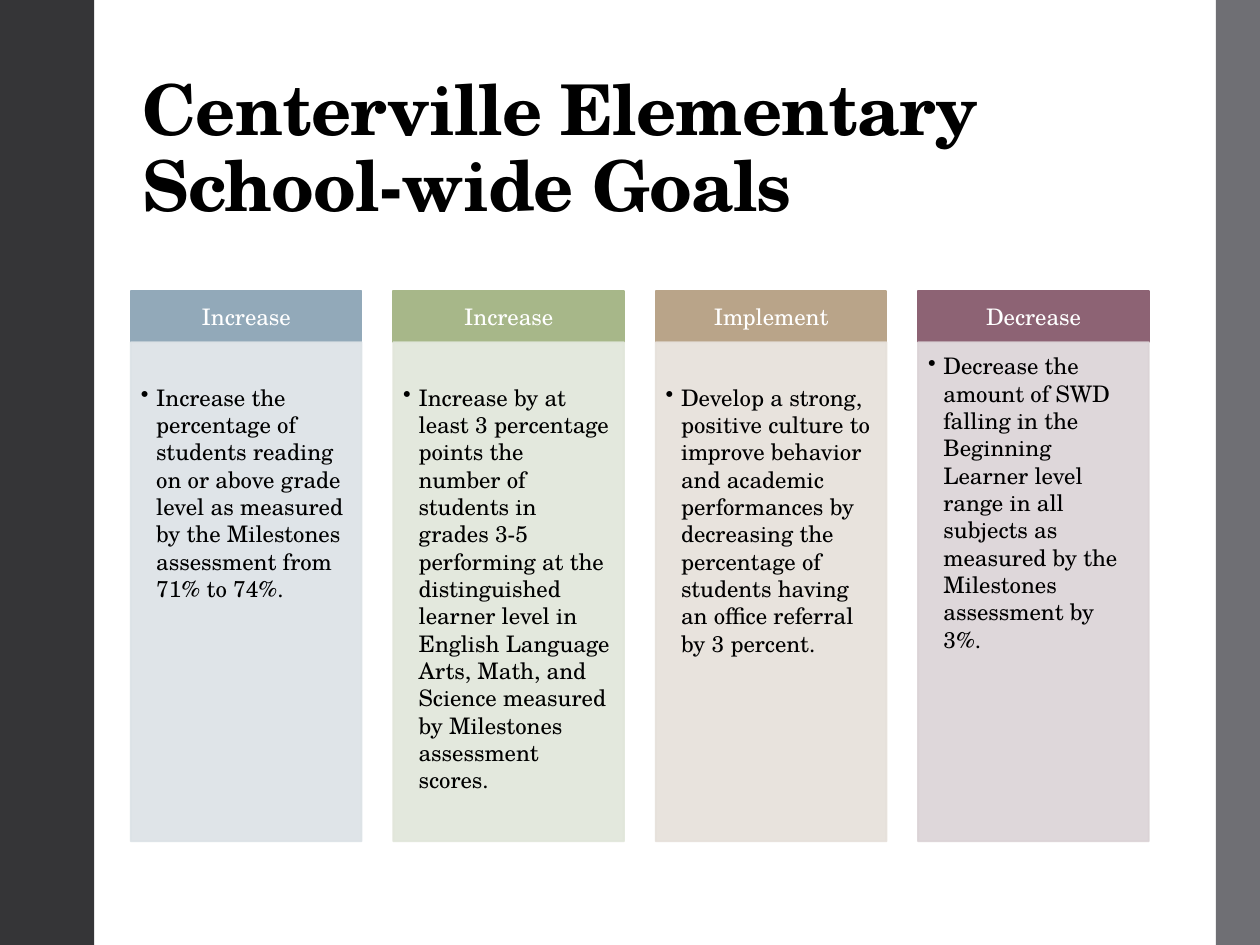
"""Build the school-wide goals slide."""
from lxml import etree
from pptx import Presentation
from pptx.dml.color import RGBColor
from pptx.enum import shapes, text
from pptx.oxml import ns
from pptx.util import Cm, Pt

FONT = "TeX Gyre Schola"
BLACK = RGBColor(0, 0, 0)
WHITE = RGBColor(255, 255, 255)
DARK = RGBColor(0x35, 0x35, 0x37)
GRAY = RGBColor(0x6F, 0x6F, 0x74)
BLUE = RGBColor(0x92, 0xA9, 0xB9)
ICE = RGBColor(0xDC, 0xE2, 0xE6)
GREEN = RGBColor(0xA7, 0xB7, 0x89)
MINT = RGBColor(0xE1, 0xE6, 0xDA)
TAN = RGBColor(0xB9, 0xA4, 0x89)
SAND = RGBColor(0xE6, 0xE0, 0xDA)
PLUM = RGBColor(0x8D, 0x63, 0x74)
ROSE = RGBColor(0xDB, 0xD3, 0xD6)

LEFT, STEP, WIDE = 2.64, 5.29, 4.65
TOP, HEAD, BODY = 5.87, 1.03, 10.06
FIRST, LOWER = 0.2, 0.83

GOALS = [
    ("Increase", BLUE, ICE, LOWER,
     "Increase the percentage of students reading on or above grade level "
     "as measured by the Milestones assessment from 71% to 74%."),
    ("Increase", GREEN, MINT, LOWER,
     "Increase by at least 3 percentage points the number of students in "
     "grades 3-5 performing at the distinguished learner level in English "
     "Language Arts, Math, and Science measured by Milestones assessment "
     "scores."),
    ("Implement", TAN, SAND, LOWER,
     "Develop a strong, positive culture to improve behavior and academic "
     "performances by decreasing the percentage of students having an "
     "office referral by 3 percent."),
    ("Decrease", PLUM, ROSE, FIRST,
     "Decrease the amount of SWD falling in the Beginning Learner level "
     "range in all subjects as measured by the Milestones assessment by 3%."),
]


def write(shape, words, size=13, color=BLACK, bold=False, anchor="TOP",
          align="LEFT", inset=(0.25, 0.13, 0.25, 0.13), line=1.0, track=0,
          bullet=False):
    """Put formatted words into a shape."""
    frame = shape.text_frame
    frame.text = words
    frame.word_wrap = True
    frame.auto_size = text.MSO_AUTO_SIZE.NONE
    frame.vertical_anchor = getattr(text.MSO_ANCHOR, anchor)
    for side, gap in zip(("left", "top", "right", "bottom"), inset):
        setattr(frame, "margin_" + side, Cm(gap))
    para = frame.paragraphs[0]
    para.alignment = getattr(text.PP_ALIGN, align)
    para.line_spacing = line
    for run in para.runs:
        font = run.font
        font.name, font.size, font.bold = FONT, Pt(size), bold
        font.color.rgb = color
        if track:
            run._r.get_or_add_rPr().set("spc", str(track))
    if bullet:
        props = para._p.get_or_add_pPr()
        props.set("marL", str(Cm(0.31)))
        props.set("indent", str(-Cm(0.31)))
        etree.SubElement(props, ns.qn("a:buChar")).set("char", "•")


class Deck:
    """Hold the style and the current slide."""

    def __init__(self):
        """Start a deck with one title-only slide."""
        self.file = Presentation()
        self.file.slide_width, self.file.slide_height = Cm(25.4), Cm(19.05)
        self.slide = self.file.slides.add_slide(self.file.slide_layouts[5])

    def title(self, words):
        """Place and fill the title."""
        head = self.slide.shapes.title
        head.left, head.top = Cm(2.62), Cm(1.02)
        head.width, head.height = Cm(20.55), Cm(3.68)
        write(head, words, size=40, bold=True, anchor="BOTTOM", line=0.9,
              track=-50)

    def box(self, x, y, w, h, color, edge=False, alpha=100):
        """Draw a flat rectangle."""
        box = self.slide.shapes.add_shape(
            shapes.MSO_SHAPE.RECTANGLE, Cm(x), Cm(y), Cm(w), Cm(h))
        box.shadow.inherit = False
        box.fill.solid()
        box.fill.fore_color.rgb = color
        if edge:
            box.line.color.rgb = color
            box.line.width = Pt(1.1)
        else:
            box.line.fill.background()
        if alpha < 100:
            for tint in box._element.spPr.iter(ns.qn("a:srgbClr")):
                etree.SubElement(tint, ns.qn("a:alpha")).set(
                    "val", str(alpha * 1000))
        return box

    def goal(self, x, name, color, pale, drop, words):
        """Draw one column with its heading and bullet."""
        head = self.box(x, TOP, WIDE, HEAD, color, edge=True)
        write(head, name, color=WHITE, anchor="MIDDLE", align="CENTER",
              inset=(0.25, 0.15, 0.25, 0.15))
        body = self.box(x, TOP + HEAD, WIDE, BODY, pale, edge=True, alpha=90)
        write(body, words, inset=(0.2, drop, 0.25, 0.28), bullet=True)


def main():
    """Build and save the deck."""
    deck = Deck()
    deck.title("Centerville Elementary\vSchool-wide Goals")
    deck.box(0, 0, 1.9, 19.05, DARK)
    deck.box(24.51, 0, 0.89, 19.05, GRAY)
    for i, goal in enumerate(GOALS):
        deck.goal(LEFT + i * STEP, *goal)
    deck.file.save("out.pptx")


if __name__ == "__main__":
    main()
